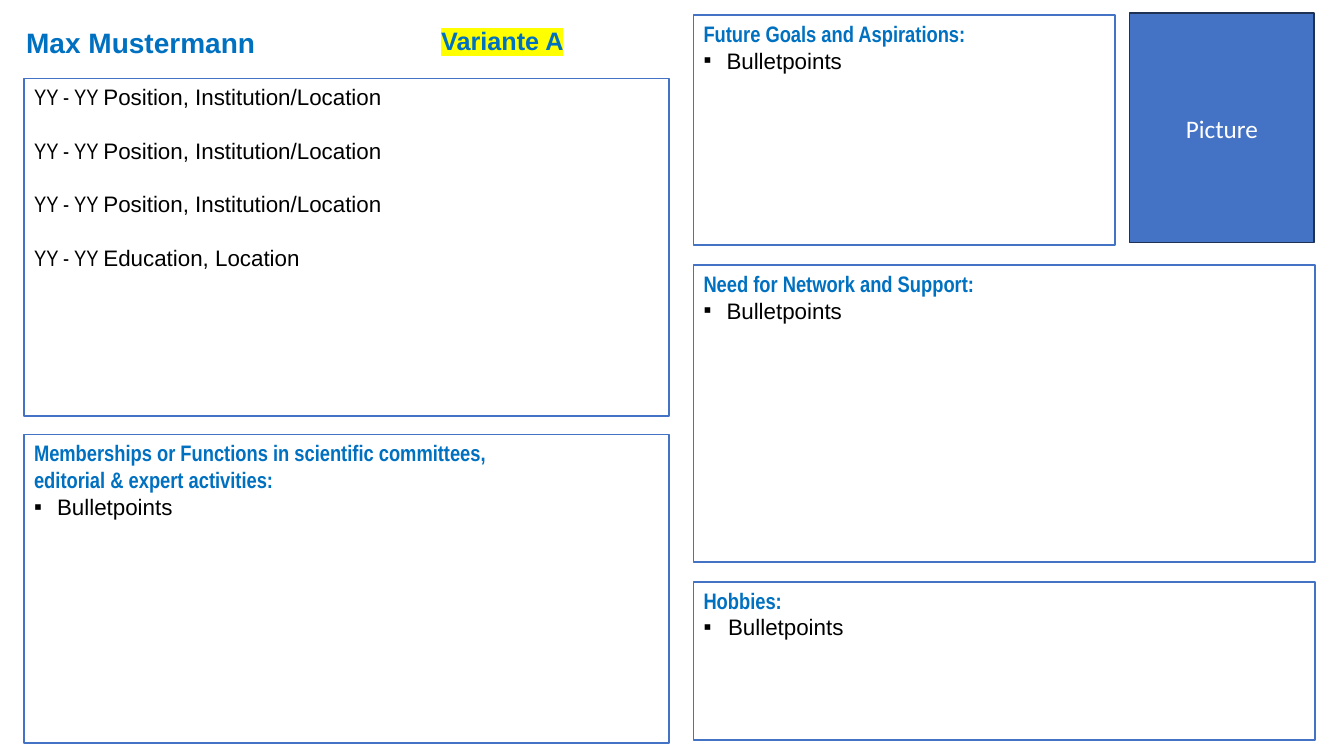
from lxml import etree
from pptx import Presentation
from pptx.dml.color import RGBColor
from pptx.enum.shapes import MSO_SHAPE
from pptx.enum.text import MSO_ANCHOR, PP_ALIGN
from pptx.oxml.ns import qn
from pptx.util import Cm, Pt

RECTANGLE = MSO_SHAPE.RECTANGLE
TOP, MIDDLE, BOTTOM = MSO_ANCHOR.TOP, MSO_ANCHOR.MIDDLE, MSO_ANCHOR.BOTTOM
LEFT, CENTER = PP_ALIGN.LEFT, PP_ALIGN.CENTER
BLUE = RGBColor(0x44, 0x72, 0xC4)
NAVY = RGBColor(0x1E, 0x32, 0x56)
HEADING_BLUE = RGBColor(0x00, 0x70, 0xC0)
BLACK = RGBColor(0x00, 0x00, 0x00)
WHITE = RGBColor(0xFF, 0xFF, 0xFF)
YELLOW = RGBColor(0xFF, 0xFF, 0x00)

LEFT_COLUMN, LEFT_WIDTH = 0.61, 16.26
RIGHT_COLUMN, RIGHT_WIDTH = 17.48, 15.67

deck = Presentation()
deck.slide_width, deck.slide_height = Cm(33.87), Cm(19.05)
page = deck.slides.add_slide(deck.slide_layouts[6])


def add_box(left, top, width, height, line_color=BLUE, line_width=1.25):
    """Add an unfilled outlined rectangle, measured in centimetres."""
    box = page.shapes.add_shape(RECTANGLE, Cm(left), Cm(top), Cm(width), Cm(height))
    box.shadow.inherit = False
    box.fill.background()
    box.line.color.rgb = line_color
    box.line.width = Pt(line_width)
    box.text_frame.word_wrap = True
    box.text_frame.vertical_anchor = TOP
    return box


def format_runs(para, size, font, color, bold=False, align=LEFT):
    para.alignment = align
    for span in para.runs:
        span.font.size = Pt(size)
        span.font.name = font
        span.font.color.rgb = color
        span.font.bold = bold


# Career
career = add_box(LEFT_COLUMN, 1.98, LEFT_WIDTH, 8.51).text_frame
entries = ["Position, Institution/Location"] * 3 + ["Education, Location"]
for index, entry in enumerate(entries):
    para = career.add_paragraph() if index else career.paragraphs[0]
    para.space_after = Pt(19)
    para.add_run().text = "YY - YY "
    para.add_run().text = entry
    format_runs(para, 16, "Arial", BLACK)
    para.runs[0].font.name = "Arial Narrow"

# Headed bullet sections: heading, left, top, width, height, bullet indent
sections = [
    ("Hobbies:", RIGHT_COLUMN, 14.66, RIGHT_WIDTH, 3.99, 0.62),
    ("Need for Network and Support:", RIGHT_COLUMN, 6.68, RIGHT_WIDTH, 7.49, 0.58),
    ("Future Goals and Aspirations:", RIGHT_COLUMN, 0.38, 10.62, 5.79, 0.58),
    ("Memberships or Functions in scientific committees,\veditorial & expert activities:",
     LEFT_COLUMN, 10.95, LEFT_WIDTH, 7.77, 0.58),
]
for heading, left, top, width, height, indent in sections:
    frame = add_box(left, top, width, height).text_frame
    frame.paragraphs[0].text = heading
    format_runs(frame.paragraphs[0], 16, "Arial Narrow", HEADING_BLUE, bold=True)
    para = frame.add_paragraph()
    para.text = "Bulletpoints"
    format_runs(para, 16, "Arial", BLACK)
    properties = para._p.get_or_add_pPr()
    properties.set("marL", str(Cm(indent)))
    properties.set("indent", str(-Cm(indent)))
    etree.SubElement(properties, qn("a:buFont"), typeface="Arial")
    etree.SubElement(properties, qn("a:buChar"), char="▪")

# Portrait placeholder
portrait = add_box(28.47, 0.33, 4.65, 5.79, NAVY, 1)
portrait.fill.solid()
portrait.fill.fore_color.rgb = BLUE
portrait.text_frame.vertical_anchor = MIDDLE
portrait.text_frame.text = "Picture"
format_runs(portrait.text_frame.paragraphs[0], 18, "Calibri", WHITE, align=CENTER)

# Name and variant label
name = page.shapes.add_textbox(Cm(0.41), Cm(-0.61), Cm(29.21), Cm(2.24)).text_frame
name.word_wrap = True
name.vertical_anchor = BOTTOM
name.text = "Max Mustermann"
name.paragraphs[0].line_spacing = 0.9
format_runs(name.paragraphs[0], 20, "Arial", HEADING_BLUE, bold=True)

variant = page.shapes.add_textbox(Cm(10.87), Cm(0.51), Cm(18.42), Cm(1.02)).text_frame
variant.word_wrap = True
variant.text = "Variante A"
format_runs(variant.paragraphs[0], 18, "Arial", HEADING_BLUE, bold=True)
highlight = etree.Element(qn("a:highlight"))
etree.SubElement(highlight, qn("a:srgbClr"), val=str(YELLOW))
run_properties = variant.paragraphs[0].runs[0]._r.get_or_add_rPr()
run_properties.find(qn("a:solidFill")).addnext(highlight)

deck.save("out.pptx")
